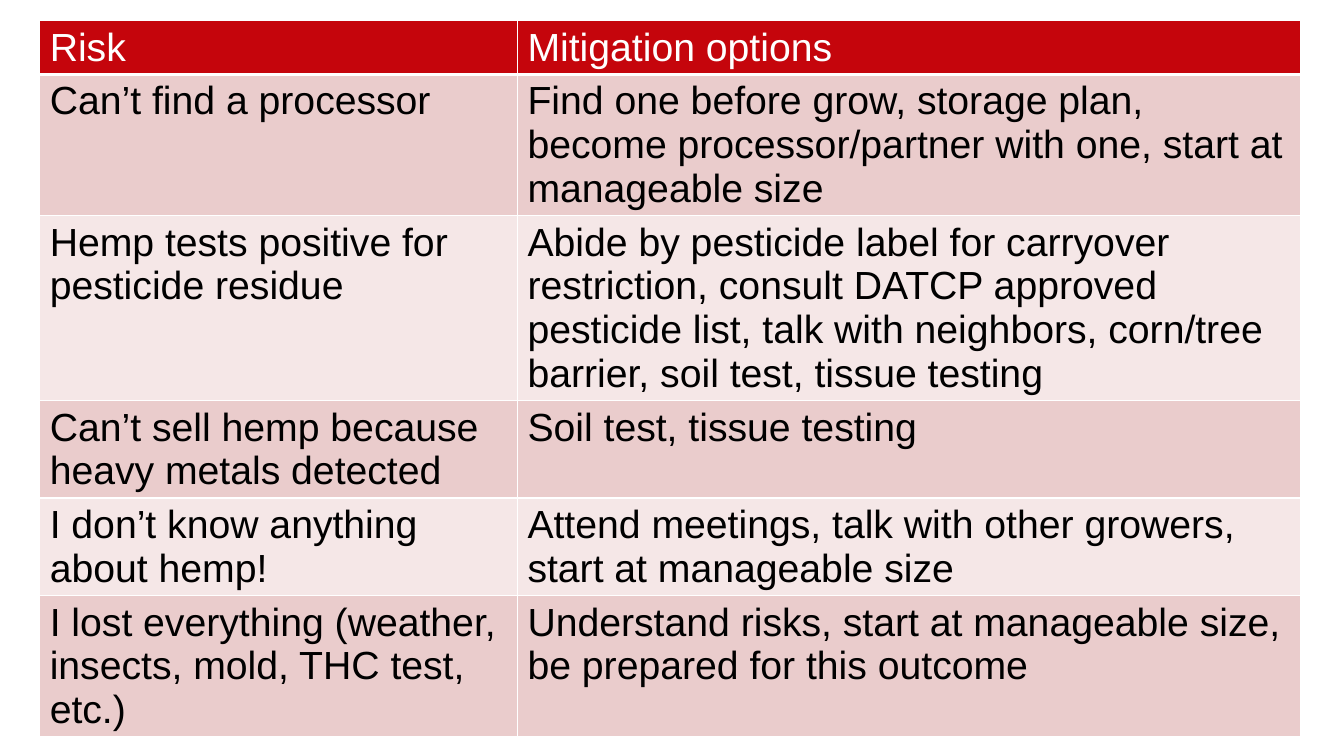
from lxml.etree import SubElement
from pptx import Presentation
from pptx.dml.color import RGBColor
from pptx.oxml.ns import qn
from pptx.util import Cm, Pt

# Content: header first, then one risk per row
ROWS = [
    ("Risk", "Mitigation options"),
    ("Can’t find a processor",
     "Find one before grow, storage plan, become processor/partner with one, "
     "start at manageable size"),
    ("Hemp tests positive for pesticide residue",
     "Abide by pesticide label for carryover restriction, consult DATCP approved "
     "pesticide list, talk with neighbors, corn/tree barrier, soil test, tissue testing"),
    ("Can’t sell hemp because heavy metals detected", "Soil test, tissue testing"),
    ("I don’t know anything about hemp!",
     "Attend meetings, talk with other growers, start at manageable size"),
    ("I lost everything (weather, insects, mold, THC test, etc.)",
     "Understand risks, start at manageable size, be prepared for this outcome"),
]
LINES_PER_ROW = [1, 3, 4, 2, 2, 3]
COLUMN_WIDTHS = [12.04, 19.74]
LEFT, TOP = 1.0, 0.52
LINE_HEIGHT, ROW_PADDING = 1.1, 0.25
COLORS = {"header": "C5050C", "odd": "EACCCC", "even": "F5E7E7",
          "white": "FFFFFF", "black": "000000"}
FONT = {"name": "Arial", "size": Pt(28), "bold": False}


def add_borders(cell, bottom_width):
    """Draw white lines on the four sides of a cell."""
    properties = cell._tc.get_or_add_tcPr()
    for side, width in (("L", 1), ("R", 1), ("T", 1), ("B", bottom_width)):
        line = SubElement(properties, qn(f"a:ln{side}"), w=str(Pt(width)))
        fill = SubElement(line, qn("a:solidFill"))
        SubElement(fill, qn("a:srgbClr"), val=COLORS["white"])


def fill_cell(cell, text, row_number):
    """Write and format one cell."""
    is_header = row_number == 0
    band = "header" if is_header else "odd" if row_number % 2 else "even"
    add_borders(cell, 3 if is_header else 1)
    cell.fill.solid()
    cell.fill.fore_color.rgb = RGBColor.from_string(COLORS[band])
    para = cell.text_frame.paragraphs[0]
    span = para.add_run()
    span.text = text
    for name, value in FONT.items():
        setattr(span.font, name, value)
    text_color = COLORS["white" if is_header else "black"]
    span.font.color.rgb = RGBColor.from_string(text_color)


# Slide
deck = Presentation()
deck.slide_width, deck.slide_height = Cm(33.87), Cm(19.05)
page = deck.slides.add_slide(deck.slide_layouts[6])

# Risk table: each row is as tall as its longest cell
row_heights = [lines * LINE_HEIGHT + ROW_PADDING for lines in LINES_PER_ROW]
table = page.shapes.add_table(
    len(ROWS), len(COLUMN_WIDTHS), Cm(LEFT), Cm(TOP),
    Cm(sum(COLUMN_WIDTHS)), Cm(sum(row_heights))).table
for column, width in zip(table.columns, COLUMN_WIDTHS):
    column.width = Cm(width)
for row_number, (texts, height) in enumerate(zip(ROWS, row_heights)):
    table.rows[row_number].height = Cm(height)
    for column_number, text in enumerate(texts):
        fill_cell(table.cell(row_number, column_number), text, row_number)

deck.save("out.pptx")
